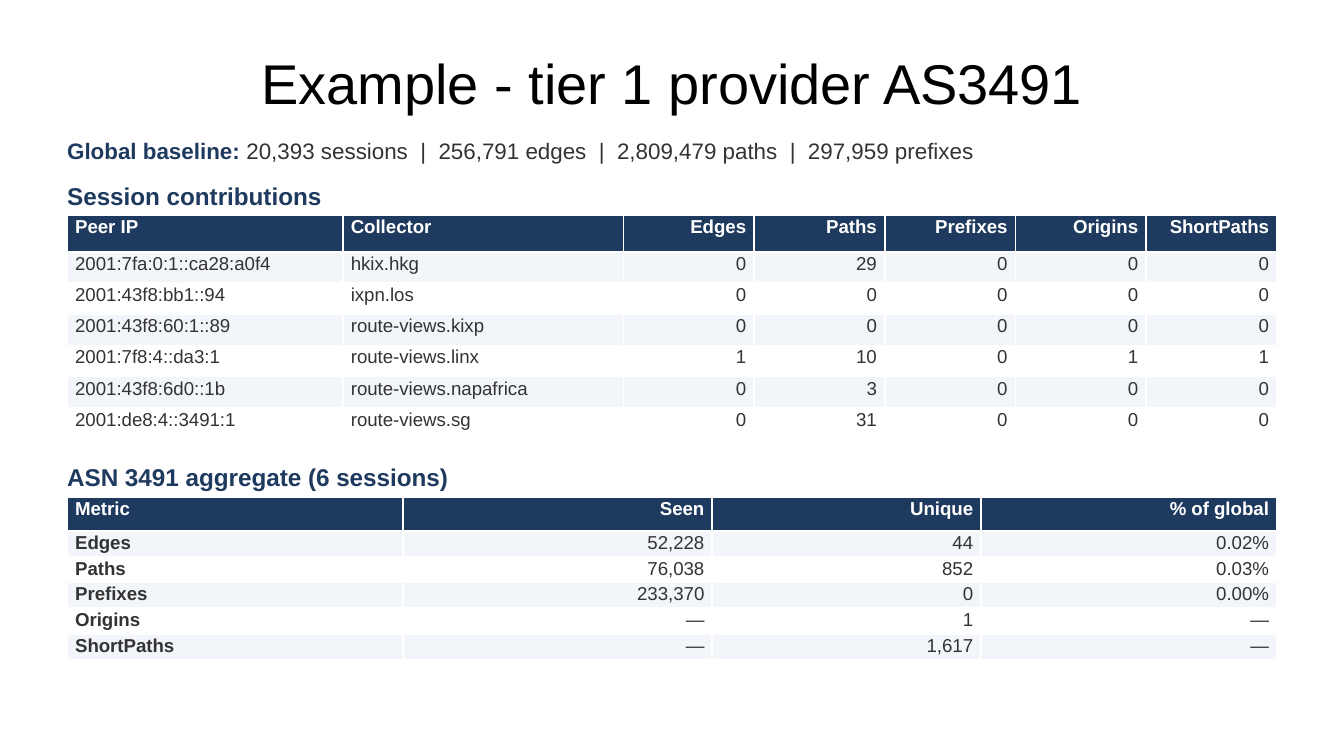
from pptx import Presentation
from pptx.dml.color import RGBColor
from pptx.enum.text import MSO_ANCHOR, PP_ALIGN
from pptx.util import Cm, Pt

MIDDLE = MSO_ANCHOR.MIDDLE
LEFT, CENTER, RIGHT = PP_ALIGN.LEFT, PP_ALIGN.CENTER, PP_ALIGN.RIGHT

FONT = "Arial"
NAVY, DARK, BLACK, WHITE, STRIPE = "1F3A5F", "333333", "000000", "FFFFFF", "F2F5F9"
MARGIN, CONTENT_WIDTH = 1.27, 22.86

TITLE = "Example - tier 1 provider AS3491"
BASELINE = [
    ("Global baseline: ", NAVY, True),
    ("20,393 sessions  |  256,791 edges  |  2,809,479 paths  |  297,959 prefixes",
     DARK, False),
]

SECTIONS = [
    {
        "heading": "Session contributions",
        "heading_top": 3.43,
        "table_top": 4.06,
        "column_widths": [5.21, 5.3] + [2.47] * 5,
        "header_height": 0.7,
        "row_height": 0.59,
        "text_columns": 2,
        "bold_first_column": False,
        "rows": [
            ("Peer IP", "Collector", "Edges", "Paths", "Prefixes", "Origins", "ShortPaths"),
            ("2001:7fa:0:1::ca28:a0f4", "hkix.hkg", "0", "29", "0", "0", "0"),
            ("2001:43f8:bb1::94", "ixpn.los", "0", "0", "0", "0", "0"),
            ("2001:43f8:60:1::89", "route-views.kixp", "0", "0", "0", "0", "0"),
            ("2001:7f8:4::da3:1", "route-views.linx", "1", "10", "0", "1", "1"),
            ("2001:43f8:6d0::1b", "route-views.napafrica", "0", "3", "0", "0", "0"),
            ("2001:de8:4::3491:1", "route-views.sg", "0", "31", "0", "0", "0"),
        ],
    },
    {
        "heading": "ASN 3491 aggregate (6 sessions)",
        "heading_top": 8.74,
        "table_top": 9.4,
        "column_widths": [6.35, 5.84, 5.08, 5.59],
        "header_height": 0.64,
        "row_height": 0.47,
        "text_columns": 1,
        "bold_first_column": True,
        "rows": [
            ("Metric", "Seen", "Unique", "% of global"),
            ("Edges", "52,228", "44", "0.02%"),
            ("Paths", "76,038", "852", "0.03%"),
            ("Prefixes", "233,370", "0", "0.00%"),
            ("Origins", "—", "1", "—"),
            ("ShortPaths", "—", "1,617", "—"),
        ],
    },
]


def rgb(color):
    return RGBColor.from_string(color)


def style_font(font, size, color, bold=False):
    font.name = FONT
    font.size = Pt(size)
    font.bold = bold
    font.color.rgb = rgb(color)


def add_title(slide):
    title = slide.shapes.title
    title.left, title.top = Cm(MARGIN), Cm(0.58)
    title.width, title.height = Cm(CONTENT_WIDTH), Cm(1.96)
    title.text_frame.text = TITLE
    title.text_frame.vertical_anchor = MIDDLE
    paragraph = title.text_frame.paragraphs[0]
    paragraph.alignment = CENTER
    style_font(paragraph.font, 30, BLACK)


def add_text_line(slide, top, height, size, parts):
    """Add a one-line text box; parts are (text, colour, bold) runs."""
    box = slide.shapes.add_textbox(Cm(MARGIN), Cm(top), Cm(CONTENT_WIDTH), Cm(height))
    frame = box.text_frame
    frame.word_wrap = True
    frame.margin_left = frame.margin_top = frame.margin_right = frame.margin_bottom = 0
    for text, color, bold in parts:
        run = frame.paragraphs[0].add_run()
        run.text = text
        style_font(run.font, size, color, bold)


def fill_cell(cell, text, fill, color, bold, alignment):
    cell.fill.solid()
    cell.fill.fore_color.rgb = rgb(fill)
    cell.margin_left = cell.margin_right = Cm(0.15)
    cell.margin_top = cell.margin_bottom = Cm(0.03)
    cell.text = text
    paragraph = cell.text_frame.paragraphs[0]
    paragraph.alignment = alignment
    style_font(paragraph.font, 10, color, bold)


def add_section(slide, section):
    add_text_line(slide, section["heading_top"], 0.61, 13,
                  [(section["heading"], NAVY, True)])

    rows, widths = section["rows"], section["column_widths"]
    heights = [section["header_height"]] + [section["row_height"]] * (len(rows) - 1)
    table = slide.shapes.add_table(
        len(rows), len(widths), Cm(MARGIN), Cm(section["table_top"]),
        Cm(sum(widths)), Cm(sum(heights))).table
    for column, width in zip(table.columns, widths):
        column.width = Cm(width)

    for row_index, values in enumerate(rows):
        table.rows[row_index].height = Cm(heights[row_index])
        is_header = row_index == 0
        if is_header:
            fill, color = NAVY, WHITE
        else:
            fill, color = (STRIPE if row_index % 2 else WHITE), DARK
        for column_index, value in enumerate(values):
            bold = is_header or (section["bold_first_column"] and column_index == 0)
            alignment = LEFT if column_index < section["text_columns"] else RIGHT
            fill_cell(table.cell(row_index, column_index), value,
                      fill, color, bold, alignment)


def main():
    presentation = Presentation()
    presentation.slide_width, presentation.slide_height = Cm(25.4), Cm(14.29)
    slide = presentation.slides.add_slide(
        presentation.slide_layouts.get_by_name("Title Only"))
    add_title(slide)
    add_text_line(slide, 2.59, 0.71, 12, BASELINE)
    for section in SECTIONS:
        add_section(slide, section)
    presentation.save("out.pptx")


if __name__ == "__main__":
    main()
